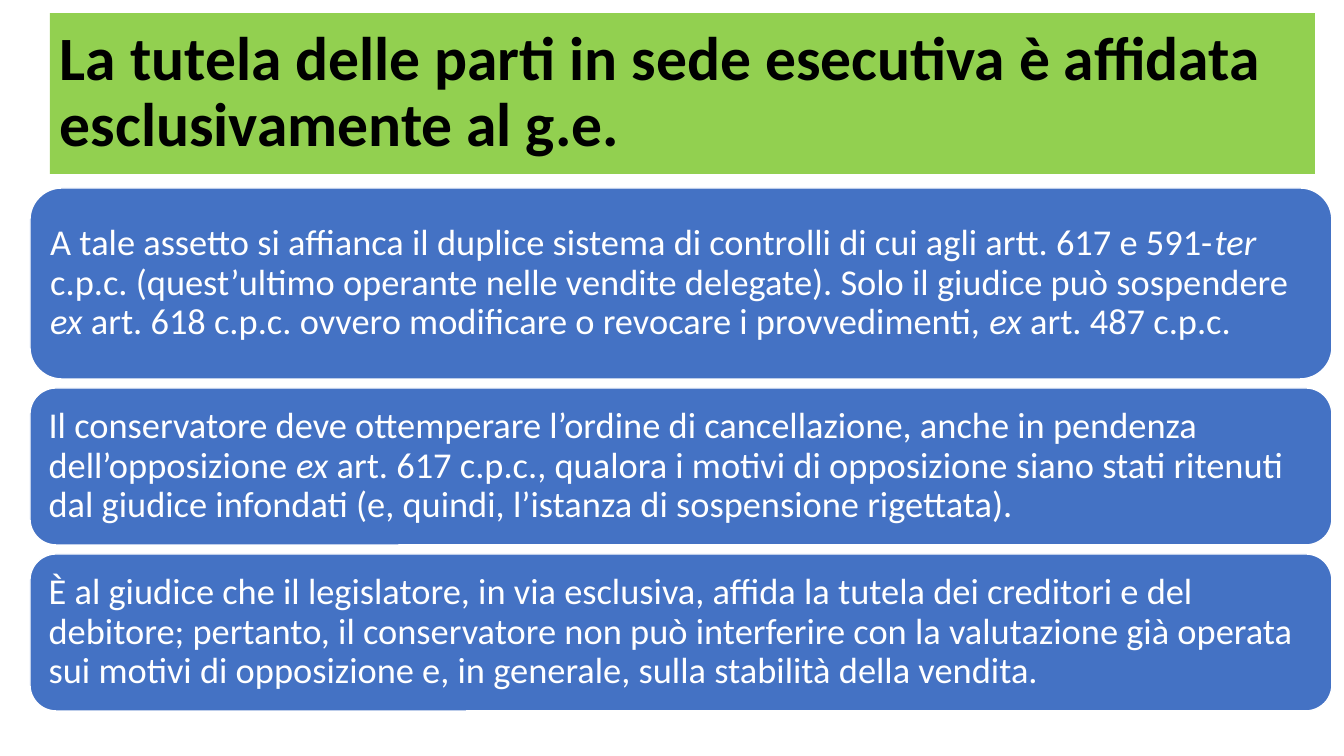
import pptx
import pptx.util
import pptx.dml.color
import pptx.enum.shapes
import pptx.enum.text

PX = 914400 / 100.8
GREEN = pptx.dml.color.RGBColor(0x92, 0xD0, 0x50)
BLUE = pptx.dml.color.RGBColor(0x44, 0x72, 0xC4)
WHITE = pptx.dml.color.RGBColor(0xFF, 0xFF, 0xFF)
BLACK = pptx.dml.color.RGBColor(0x00, 0x00, 0x00)

TITLE = "La tutela delle parti in sede esecutiva è affidata esclusivamente al g.e."
BOXES = [
    (191, "A tale assetto si affianca il duplice sistema di controlli di cui agli artt. 617 e 591-*ter *"
          "c.p.c. (quest’ultimo operante nelle vendite delegate). Solo il giudice può sospendere *ex *"
          "art. 618 c.p.c. ovvero modificare o revocare i provvedimenti, *ex *art. 487 c.p.c."),
    (157, "Il conservatore deve ottemperare l’ordine di cancellazione, anche in pendenza "
          "dell’opposizione *ex *art. 617 c.p.c., qualora i motivi di opposizione siano stati ritenuti "
          "dal giudice infondati (e, quindi, l’istanza di sospensione rigettata)."),
    (157, "È al giudice che il legislatore, in via esclusiva, affida la tutela dei creditori e del "
          "debitore; pertanto, il conservatore non può interferire con la valutazione già operata "
          "sui motivi di opposizione e, in generale, sulla stabilità della vendita."),
]
BOX_LEFT, BOX_WIDTH, BOX_GAP = 30, 1302, 9
TITLE_FONT = {"name": "Calibri", "size": pptx.util.Pt(44), "bold": True}
BOX_FONT = {"name": "Calibri", "size": pptx.util.Pt(26), "bold": False}


def px(length):
    return pptx.util.Emu(round(length * PX))


def add_panel(kind, bounds, fill, text, font, color, insets):
    shape = slide.shapes.add_shape(kind, *map(px, bounds))
    shape.shadow.inherit = False
    shape.fill.solid()
    shape.fill.fore_color.rgb = fill
    frame = shape.text_frame
    frame.word_wrap = True
    frame.vertical_anchor = pptx.enum.text.MSO_ANCHOR.MIDDLE
    for side, inset in zip(("left", "top", "right", "bottom"), insets):
        setattr(frame, f"margin_{side}", px(inset))
    paragraph = frame.paragraphs[0]
    paragraph.alignment = pptx.enum.text.PP_ALIGN.LEFT
    paragraph.line_spacing = 0.9
    for index, part in enumerate(text.split("*")):
        run = paragraph.add_run()
        run.text = part
        for name, value in font.items():
            setattr(run.font, name, value)
        run.font.italic = index % 2 == 1
        run.font.color.rgb = color
    return shape


presentation = pptx.Presentation()
presentation.slide_width = px(1344)
presentation.slide_height = px(756)
slide = presentation.slides.add_slide(presentation.slide_layouts[6])

title = add_panel(pptx.enum.shapes.MSO_SHAPE.RECTANGLE, (50, 13, 1265, 161),
                  GREEN, TITLE, TITLE_FONT, BLACK, (10, 5, 10, 5))
title.line.fill.background()

top = 188
for height, text in BOXES:
    box = add_panel(pptx.enum.shapes.MSO_SHAPE.ROUNDED_RECTANGLE, (BOX_LEFT, top, BOX_WIDTH, height),
                    BLUE, text, BOX_FONT, WHITE, (11, 11, 11, 11))
    box.line.color.rgb = WHITE
    box.line.width = pptx.util.Pt(1)
    top += height + BOX_GAP

presentation.save("out.pptx")
